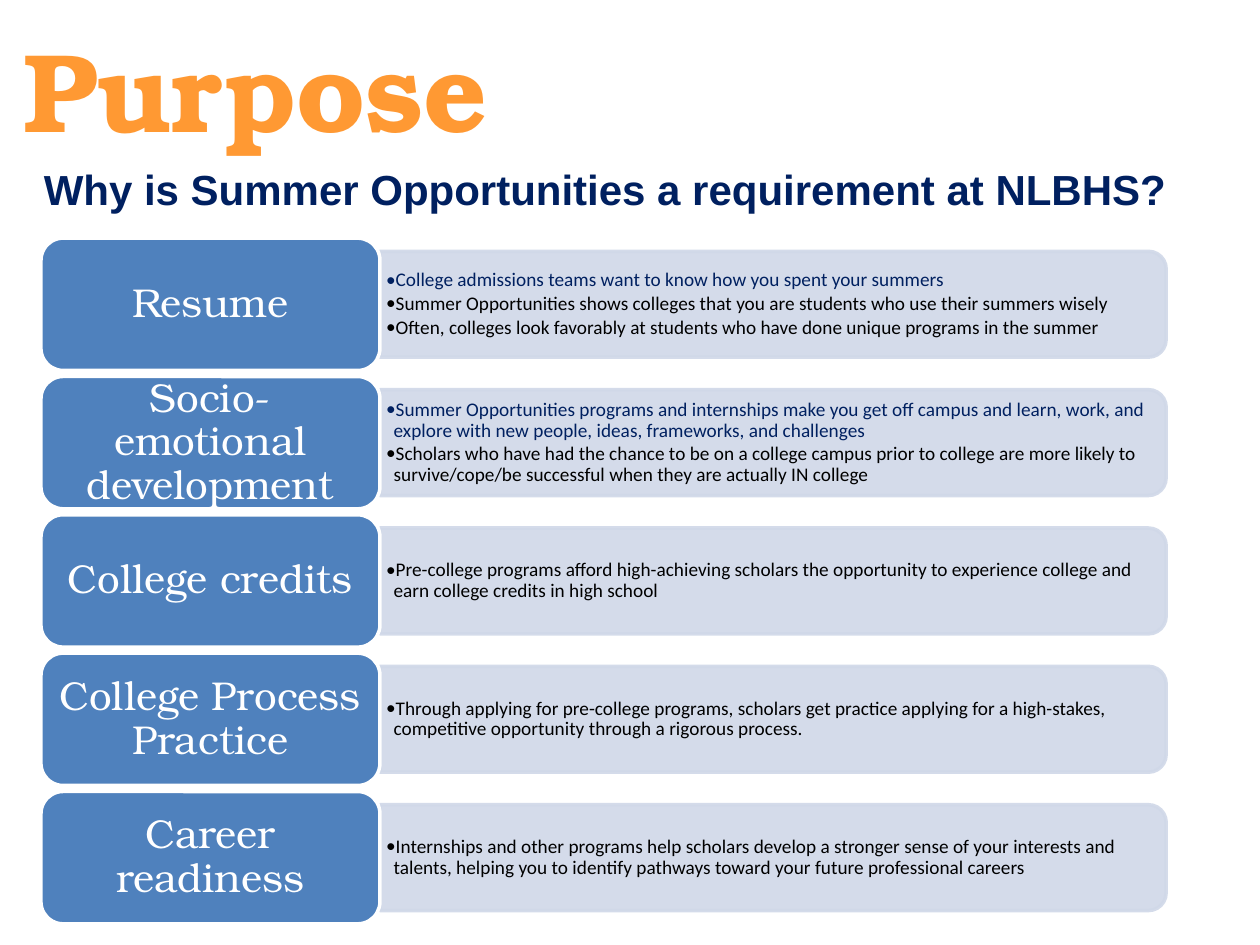
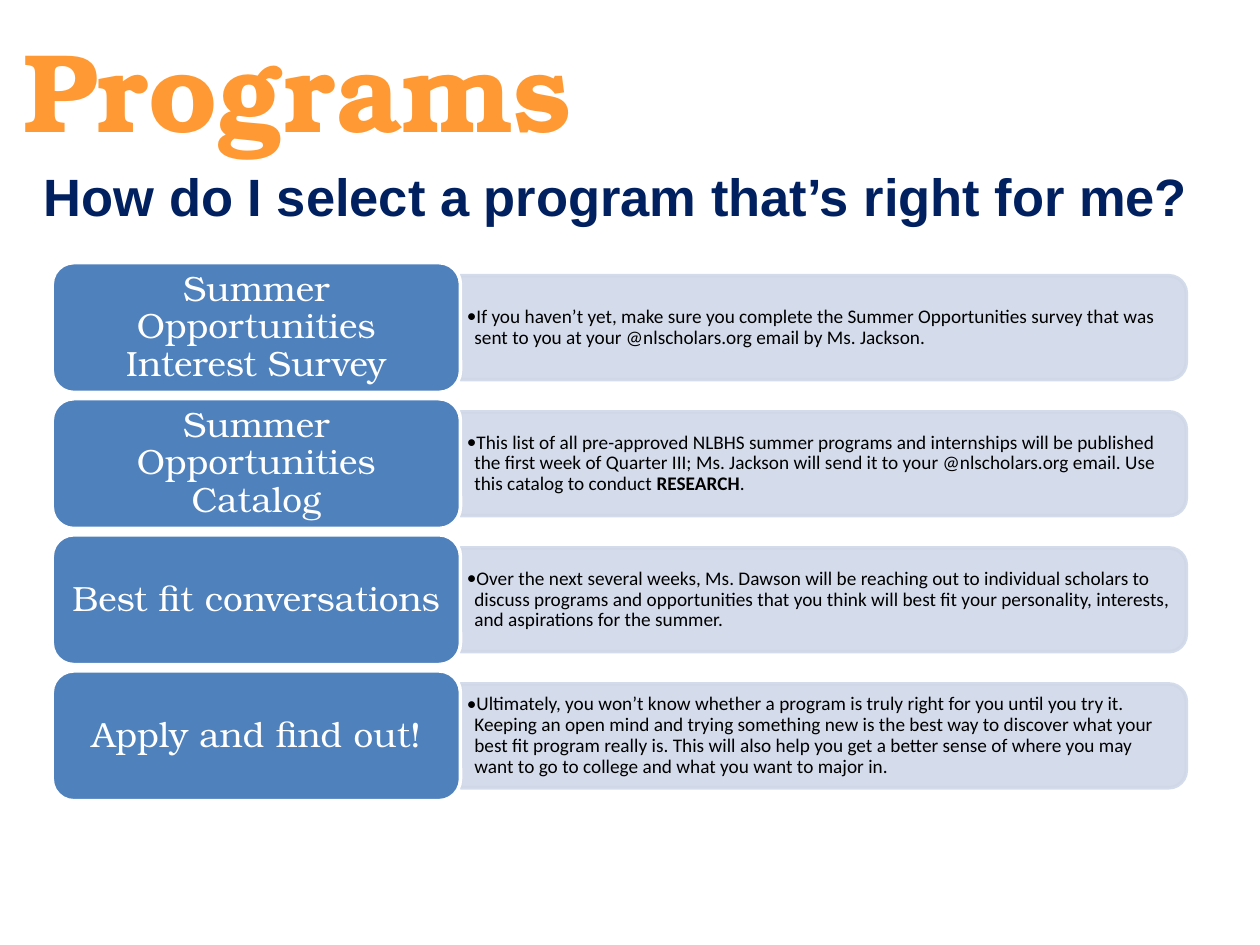
from lxml import etree
from pptx import Presentation
from pptx import util as u
from pptx.dml.color import RGBColor
from pptx.enum import shapes, text
from pptx.oxml import ns

ORANGE = RGBColor(0xFF, 0x99, 0x33)
NAVY = RGBColor(0x00, 0x20, 0x60)
BLUE = RGBColor(0x4F, 0x81, 0xBD)
PALE = RGBColor(0xD0, 0xD8, 0xE8)
WHITE = RGBColor(0xFF, 0xFF, 0xFF)
BLACK = RGBColor(0x00, 0x00, 0x00)
SERIF = "TeX Gyre Bonum"
SANS = "Arial"
BODY = "Calibri"

deck = Presentation()
deck.slide_width = u.Inches(10)
deck.slide_height = u.Inches(7.5)
COL = deck.slide_width / 100
ROW = deck.slide_height / 75


def grid(left, top, width, height):
    return [round(left * COL), round(top * ROW), round(width * COL), round(height * ROW)]


def write(box, paragraphs, size, font, color, lead=None, bold=False, center=False,
          middle=True, inset=(0.1, 0.05), spacing=1, before=0, after=0, bullet=False):
    frame = box.text_frame
    frame.word_wrap = True
    frame.vertical_anchor = text.MSO_ANCHOR.MIDDLE if middle else text.MSO_ANCHOR.TOP
    frame.margin_left = frame.margin_right = u.Inches(inset[0])
    frame.margin_top = frame.margin_bottom = u.Inches(inset[1])
    for number, words in enumerate(paragraphs):
        para = frame.add_paragraph() if number else frame.paragraphs[0]
        para.alignment = text.PP_ALIGN.CENTER if center else text.PP_ALIGN.LEFT
        para.line_spacing = spacing
        para.space_before = u.Pt(before)
        para.space_after = u.Pt(after)
        if bullet:
            properties = para._p.get_or_add_pPr()
            properties.set("marL", str(u.Inches(0.06)))
            properties.set("indent", str(-u.Inches(0.06)))
            etree.SubElement(properties, ns.qn("a:buFont")).set("typeface", font)
            etree.SubElement(properties, ns.qn("a:buChar")).set("char", "•")
        for order, part in enumerate(words.split("**")):
            span = para.add_run()
            span.text = part
            span.font.name = font
            span.font.size = u.Pt(size)
            span.font.bold = bold or order % 2 == 1
            span.font.color.rgb = lead if lead and number == 0 else color


PAGES = [
    dict(
        title="Purpose",
        question="Why is Summer Opportunities a requirement at NLBHS?",
        question_size=24, question_width=93.3, question_height=5,
        left=3.25, top=18.9, card_width=26.9, card_height=10.5, pitch=10.98,
        panel_width=62.4, label_size=23, label_inset=(0.09, 0.05),
        rows=[
            ("Resume", [
                "College admissions teams want to know how you spent your summers",
                "Summer Opportunities shows colleges that you are students who use their summers wisely",
                "Often, colleges look favorably at students who have done unique programs in the summer"]),
            ("Socio-emotional development", [
                "Summer Opportunities programs and internships make you get off campus and learn, work, "
                "and explore with new people, ideas, frameworks, and challenges",
                "Scholars who have had the chance to be on a college campus prior to college are more "
                "likely to survive/cope/be successful when they are actually IN college"]),
            ("College credits", [
                "Pre-college programs afford high-achieving scholars the opportunity to experience "
                "college and earn college credits in high school"]),
            ("College Process Practice", [
                "Through applying for pre-college programs, scholars get practice applying for a "
                "high-stakes, competitive opportunity through a rigorous process."]),
            ("Career readiness", [
                "Internships and other programs help scholars develop a stronger sense of your "
                "interests and talents, helping you to identify pathways toward your future "
                "professional careers"]),
        ]),
    dict(
        title="Programs",
        question="How do I select a program that’s right for me?",
        question_size=30, question_width=97.5, question_height=14.2,
        left=4.15, top=20.85, card_width=32.4, card_height=10.3, pitch=10.8,
        panel_width=57.6, label_size=20, label_inset=(0.08, 0.04),
        rows=[
            ("Summer Opportunities Interest Survey", [
                "If you haven’t yet, make sure you complete the Summer Opportunities survey that was "
                "sent to you at your @nlscholars.org email by Ms. Jackson."]),
            ("Summer Opportunities Catalog", [
                "This list of all pre-approved NLBHS summer programs and internships will be published "
                "the first week of Quarter III; Ms. Jackson will send it to your @nlscholars.org email. "
                "Use this catalog to conduct **RESEARCH**."]),
            ("Best fit conversations", [
                "Over the next several weeks, Ms. Dawson will be reaching out to individual scholars to "
                "discuss programs and opportunities that you think will best fit your personality, "
                "interests, and aspirations for the summer."]),
            ("Apply and find out!", [
                "Ultimately, you won’t know whether a program is truly right for you until you try it. "
                "Keeping an open mind and trying something new is the best way to discover what your "
                "best fit program really is. This will also help you get a better sense of where you "
                "may want to go to college and what you want to major in."]),
        ]),
]

for content in PAGES:
    page = deck.slides.add_slide(deck.slide_layouts[6])
    title = page.shapes.add_textbox(*grid(0.85, 0.6, 84.2, 12.7))
    write(title, [content["title"]], 64, SERIF, ORANGE, bold=True)
    question = page.shapes.add_textbox(
        *grid(2.5, 12.5, content["question_width"], content["question_height"]))
    size = content["question_size"]
    write(question, [content["question"]], size, SANS, NAVY, bold=True, middle=False,
          before=0.1 * size)

    card_width, card_height = content["card_width"], content["card_height"]
    panel_left = content["left"] + card_width
    panel_width, panel_height = content["panel_width"], 0.8 * card_height
    for index, (label, points) in enumerate(content["rows"]):
        top = content["top"] + index * content["pitch"]
        center_x = panel_left + panel_width / 2
        center_y = top + card_height / 2

        panel = page.shapes.add_shape(
            shapes.MSO_SHAPE.ROUND_2_SAME_RECTANGLE,
            *grid(center_x - panel_height / 2, center_y - panel_width / 2,
                  panel_height, panel_width))
        panel.rotation = 90
        panel.shadow.inherit = False
        panel.fill.solid()
        panel.fill.fore_color.rgb = PALE
        panel.line.color.rgb = PALE
        panel.line.width = u.Pt(2)
        for tint in panel._element.spPr.iter(ns.qn("a:srgbClr")):
            etree.SubElement(tint, ns.qn("a:alpha")).set("val", "90000")

        details = page.shapes.add_textbox(
            *grid(panel_left, center_y - 0.45 * panel_height,
                  panel_width - 0.4, 0.9 * panel_height))
        write(details, points, 11, BODY, BLACK, lead=NAVY if len(points) > 1 else None,
              inset=(0.05, 0.02), spacing=0.9, after=1.65, bullet=True)

        card = page.shapes.add_shape(
            shapes.MSO_SHAPE.ROUNDED_RECTANGLE,
            *grid(content["left"], top, card_width, card_height))
        card.shadow.inherit = False
        card.fill.solid()
        card.fill.fore_color.rgb = BLUE
        card.line.color.rgb = WHITE
        card.line.width = u.Pt(2)
        write(card, [label], content["label_size"], SERIF, WHITE, center=True,
              inset=content["label_inset"], spacing=0.9)

deck.save("out.pptx")
